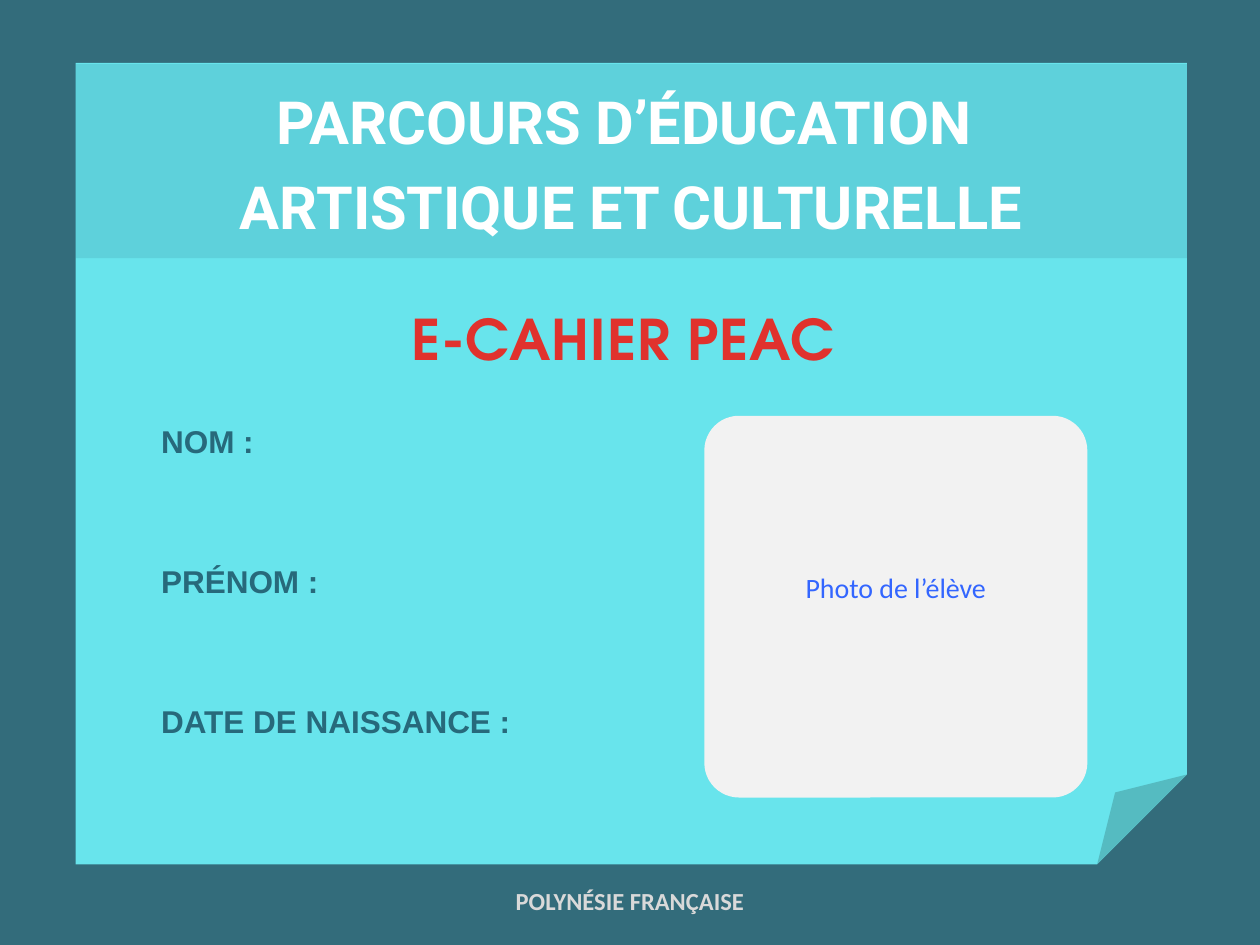
from lxml import etree
from pptx import Presentation
from pptx.dml.color import RGBColor
from pptx.enum.shapes import MSO_SHAPE
from pptx.enum.text import MSO_AUTO_SIZE, PP_ALIGN
from pptx.oxml.ns import qn
from pptx.util import Inches, Pt

FOLDED = MSO_SHAPE.FOLDED_CORNER
ROUNDED = MSO_SHAPE.ROUNDED_RECTANGLE
RECT = MSO_SHAPE.RECTANGLE
LEFT, CENTER = PP_ALIGN.LEFT, PP_ALIGN.CENTER
GROW = MSO_AUTO_SIZE.SHAPE_TO_FIT_TEXT

# Sheet edges and photo frame, in inches
SHEET_X, SHEET_W = 0.6, 8.82
PHOTO_X, PHOTO_W = 5.59, 3.04


def color(code):
    return RGBColor.from_string(code)


def add_panel(slide, kind, box, code, alpha=100, corner=0):
    """Add a borderless filled shape; alpha and corner are in percent."""
    panel = slide.shapes.add_shape(kind, *map(Inches, box))
    panel.shadow.inherit = False
    panel.line.fill.background()
    panel.fill.solid()
    panel.fill.fore_color.rgb = color(code)
    props = panel._element.spPr
    if corner:
        # The folded corner has no public adjustment
        guides = props.find(".//" + qn("a:avLst"))
        etree.SubElement(guides, qn("a:gd"), name="adj",
                         fmla=f"val {round(corner * 1000)}")
    if alpha < 100:
        tint = props.find(".//" + qn("a:srgbClr"))
        etree.SubElement(tint, qn("a:alpha"), val=str(alpha * 1000))


def add_text(slide, box, lines, font, size, code, bold=True,
             align=CENTER, leading=1.0, gap=0, track=0):
    """Add a text box with one paragraph per line; gap and track in points."""
    frame = slide.shapes.add_textbox(*map(Inches, box)).text_frame
    frame.word_wrap = True
    frame.auto_size = GROW
    for i, line in enumerate(lines):
        para = frame.add_paragraph() if i else frame.paragraphs[0]
        run = para.add_run()
        run.text = line
        para.alignment = align
        para.line_spacing = leading
        para.space_before = Pt(gap if i else 0)
        para.font.name = font
        para.font.size = Pt(size)
        para.font.bold = bold
        para.font.color.rgb = color(code)
        if track:
            run._r.get_or_add_rPr().set("spc", str(int(track * 100)))


def main():
    deck = Presentation()
    deck.slide_width, deck.slide_height = Inches(10), Inches(7.5)
    slide = deck.slides.add_slide(deck.slide_layouts[6])
    back = slide.background.fill
    back.solid()
    back.fore_color.rgb = color("336C7B")

    # Sheet with folded corner
    add_panel(slide, FOLDED, (SHEET_X, 0.5, SHEET_W, 6.36), "6BE9F1",
              alpha=96, corner=11.2)

    # Pupil details
    add_text(slide, (1.18, 3.3, 4.31, 3.13),
             ["NOM :", "PRÉNOM :", "DATE DE NAISSANCE :"],
             "Arial", 18, "27697B", align=LEFT, gap=58.5)

    # Photo frame
    add_panel(slide, ROUNDED, (PHOTO_X, 3.3, PHOTO_W, 3.03), "F2F2F2",
              corner=9.1)
    add_text(slide, (PHOTO_X, 4.48, PHOTO_W, 0.37), ["Photo de l’élève"],
             "Calibri", 16, "3366FF", bold=False)

    # Footer
    add_text(slide, (0, 6.98, 10, 0.34), ["POLYNÉSIE FRANÇAISE"],
             "Calibri", 14, "D9D9D9")

    # Subtitle
    add_text(slide, (SHEET_X, 2.21, SHEET_W, 0.77), ["E-CAHIER PEAC "],
             "TeX Gyre Adventor", 32, "E0322D", leading=1.3, track=0.5)

    # Title band
    add_panel(slide, RECT, (SHEET_X, 0.51, SHEET_W, 1.54), "27697B", alpha=15)
    add_text(slide, (SHEET_X, 0.51, SHEET_W, 1.46),
             ["PARCOURS D’ÉDUCATION ", "ARTISTIQUE ET CULTURELLE"],
             "Roboto", 34, "FFFFFF", leading=1.2)

    deck.save("out.pptx")


if __name__ == "__main__":
    main()
